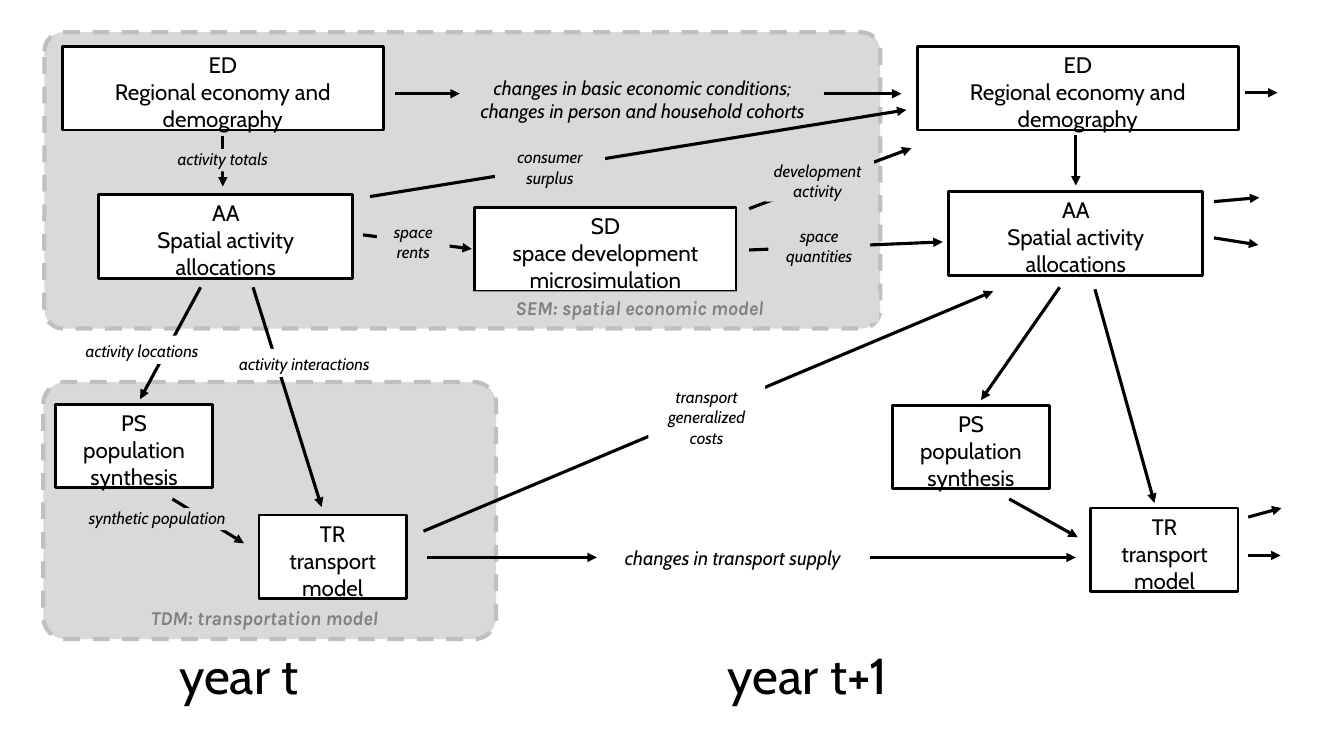
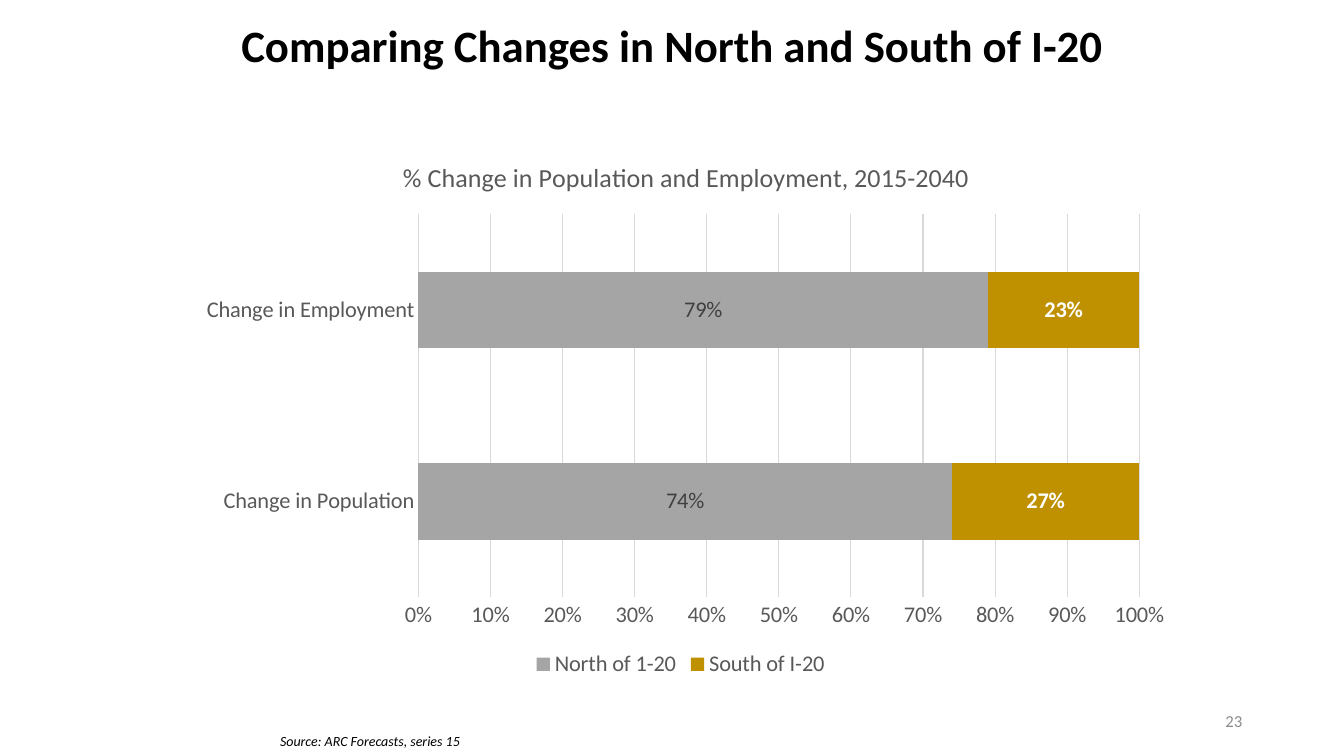
from lxml import etree
from pptx import Presentation
from pptx.chart.data import CategoryChartData
from pptx.dml.color import RGBColor
from pptx.enum.chart import XL_CHART_TYPE, XL_LEGEND_POSITION, XL_TICK_MARK
from pptx.enum.dml import MSO_LINE
from pptx.enum.shapes import MSO_CONNECTOR, MSO_SHAPE
from pptx.enum.text import MSO_ANCHOR, PP_ALIGN
from pptx.oxml.ns import qn
from pptx.util import Pt

LEFT, CENTER, RIGHT = PP_ALIGN.LEFT, PP_ALIGN.CENTER, PP_ALIGN.RIGHT
TOP, MIDDLE = MSO_ANCHOR.TOP, MSO_ANCHOR.MIDDLE
NO_TICK = XL_TICK_MARK.NONE

# Shared look: 100 px to the inch
PX = 9144
BLACK, WHITE, BAND, BAND_EDGE = "000000", "FFFFFF", "D9D9D9", "BFBFBF"
GRAY, AXIS_TEXT, PAGE_NUMBER = "808080", "595959", "8C8C8C"
DIAGRAM_FONT, BAND_FONT, REPORT_FONT = "Cabin", "Karla", "Calibri"
DEFAULT_INSETS = (10, 5, 10, 5)
TIGHT = (0, 0, 0, 4)

# Diagram content: left, top, width, height
BANDS = [
    ((43, 379, 449, 255), 0.085),
    ((44, 32, 829, 294), 0.064),
]
MODELS = {
    "ED": "ED\nRegional economy and demography",
    "AA": "AA\nSpatial activity allocations",
    "SD": "SD\nspace development microsimulation",
    "PS": "PS\npopulation\nsynthesis",
    "TR": "TR\ntransport\nmodel",
}
MODEL_WIDTHS = {"ED": 318, "AA": 252, "SD": 259, "PS": 156, "TR": 146}
MODEL_HEIGHT = 83
MODEL_PLACES = [
    # year t
    ("ED", 62, 46), ("AA", 98, 193), ("SD", 471, 206),
    ("PS", 55, 401), ("TR", 257, 511),
    # year t+1
    ("ED", 910, 46), ("AA", 941, 190), ("PS", 885, 402), ("TR", 1082, 504),
]
ARROWS = [
    # within year t
    (221, 135, 221, 185), (360, 233, 468, 247), (199, 285, 139, 396),
    (251, 285, 319, 503), (171, 495, 242, 539),
    # from year t to year t+1
    (392, 93, 456, 93), (817, 93, 894, 93), (367, 195, 899, 109),
    (743, 207, 904, 147), (743, 248, 935, 240), (420, 527, 985, 289),
    (424, 553, 592, 553), (863, 553, 1067, 553),
    # within year t+1
    (1067, 134, 1067, 184), (1051, 285, 973, 397), (1086, 287, 1145, 499),
    (1001, 495, 1069, 533),
    # onwards
    (1235, 92, 1267, 92), (1204, 200, 1249, 196), (1204, 236, 1248, 243),
    (1238, 513, 1271, 504), (1238, 551, 1270, 551),
]
FLOW_LABELS = [
    ("activity totals", (169, 148, 104, 22), BAND, TIGHT),
    ("activity locations", (63, 333, 156, 28), WHITE, DEFAULT_INSETS),
    ("activity interactions", (215, 346, 174, 28), WHITE, DEFAULT_INSETS),
    ("space\nquantities", (762, 224, 101, 41), BAND, TIGHT),
    ("development activity", (759, 159, 108, 41), BAND, (0, 0, 4, 4)),
    ("consumer\nsurplus", (491, 146, 109, 41), BAND, TIGHT),
    ("space\nrents", (374, 220, 72, 41), BAND, TIGHT),
    ("transport\ngeneralized\ncosts", (643, 379, 116, 65), WHITE, DEFAULT_INSETS),
    ("synthetic population", (65, 504, 182, 22), BAND, TIGHT),
]
CHANGE_LABELS = [
    ("changes in basic economic conditions;\n"
     "changes in person and household cohorts", (432, 70, 411, 52)),
    ("changes in transport supply", (586, 537, 282, 31)),
]
BAND_LABELS = [
    ("TDM: transportation model", (69, 596, 387, 31)),
    ("SEM: spatial economic model", (397, 289, 475, 31)),
]
YEARS = [("year t", (168, 634, 300, 65)), ("year t+1", (712, 634, 300, 65))]

# Chart content
CHART_TITLE = "% Change in Population and Employment, 2015-2040"
CATEGORIES = ["Change in Population", "Change in Employment"]
# name, values, fill, label colour, bold label
SERIES = [
    ("North of 1-20", (0.74, 0.79), "A5A5A5", "404040", False),
    ("South of I-20", (0.27, 0.23), "BF9000", WHITE, True),
]


def rgb(value):
    return RGBColor.from_string(value)


def emu(values):
    return [value * PX for value in values]


def set_font(font, name, size, color=BLACK, bold=False, italic=False):
    font.name, font.size = name, Pt(size)
    font.bold, font.italic = bold, italic
    font.color.rgb = rgb(color)


def write(shape, text, font=DIAGRAM_FONT, size=16, color=BLACK, bold=False,
          italic=False, align=CENTER, anchor=TOP, insets=DEFAULT_INSETS):
    frame = shape.text_frame
    frame.word_wrap = True
    frame.vertical_anchor = anchor
    (frame.margin_left, frame.margin_top,
     frame.margin_right, frame.margin_bottom) = emu(insets)
    for index, line in enumerate(text.split("\n")):
        paragraph = frame.paragraphs[0] if index == 0 else frame.add_paragraph()
        paragraph.alignment = align
        run = paragraph.add_run()
        run.text = line
        set_font(run.font, font, size, color, bold, italic)


def add_text(slide, text, place, fill=None, **style):
    shape = slide.shapes.add_textbox(*emu(place))
    if fill:
        shape.fill.solid()
        shape.fill.fore_color.rgb = rgb(fill)
    write(shape, text, **style)


def add_box(slide, kind, place, fill, edge, width):
    shape = slide.shapes.add_shape(kind, *emu(place))
    shape.shadow.inherit = False
    shape.fill.solid()
    shape.fill.fore_color.rgb = rgb(fill)
    shape.line.color.rgb = rgb(edge)
    shape.line.width = Pt(width)
    return shape


def add_arrow(slide, ends):
    arrow = slide.shapes.add_connector(MSO_CONNECTOR.STRAIGHT, *emu(ends))
    arrow.line.color.rgb = rgb(BLACK)
    arrow.line.width = Pt(2.25)
    line = arrow.line._get_or_add_ln()
    etree.SubElement(line, qn("a:tailEnd"), type="triangle")
    etree.SubElement(arrow._element.spPr, qn("a:effectLst"))


def set_layout(element, index, inner=False, **fractions):
    """Place a chart part by fractions of the chart area."""
    for old in element.findall(qn("c:layout")):
        element.remove(old)
    layout = etree.Element(qn("c:layout"))
    element.insert(index, layout)
    manual = etree.SubElement(layout, qn("c:manualLayout"))
    settings = {"layoutTarget": "inner"} if inner else {}
    settings.update(xMode="edge", yMode="edge", **fractions)
    for tag, value in settings.items():
        etree.SubElement(manual, qn("c:" + tag), val=str(value))


def build_diagram(slide):
    for place, rounding in BANDS:
        band = add_box(slide, MSO_SHAPE.ROUNDED_RECTANGLE, place, BAND, BAND_EDGE, 3)
        band.adjustments[0] = rounding
        band.line.dash_style = MSO_LINE.DASH
    for model, left, top in MODEL_PLACES:
        place = (left, top, MODEL_WIDTHS[model], MODEL_HEIGHT)
        box = add_box(slide, MSO_SHAPE.RECTANGLE, place, WHITE, BLACK, 2)
        write(box, MODELS[model])
    for ends in ARROWS:
        add_arrow(slide, ends)
    for text, place, fill, insets in FLOW_LABELS:
        add_text(slide, text, place, fill, size=12, italic=True, insets=insets)
    for text, place in CHANGE_LABELS:
        add_text(slide, text, place, size=14, italic=True)
    for text, place in BAND_LABELS:
        add_text(slide, text, place, BAND, font=BAND_FONT, size=14, color=GRAY,
                 bold=True, italic=True)
    for text, place in YEARS:
        add_text(slide, text, place, size=36, align=LEFT)


def add_change_chart(slide, place):
    data = CategoryChartData(number_format="0%")
    data.categories = CATEGORIES
    for name, values, *_ in SERIES:
        data.add_series(name, values)
    chart = slide.shapes.add_chart(XL_CHART_TYPE.BAR_STACKED, *emu(place), data).chart
    set_font(chart.font, REPORT_FONT, 16)

    # Title and plot area
    chart.has_title = True
    frame = chart.chart_title.text_frame
    frame.text = CHART_TITLE
    set_font(frame.paragraphs[0].runs[0].font, REPORT_FONT, 18.6, AXIS_TEXT)
    set_layout(chart.chart_title._element, 1, x=0.22, y=0.03)
    plot_area = chart._chartSpace.chart.plotArea
    set_layout(plot_area, 0, inner=True, x=0.24, y=0.14, w=0.715, h=0.704)

    # Axes
    category_axis, value_axis = chart.category_axis, chart.value_axis
    for axis in (category_axis, value_axis):
        axis.major_tick_mark = axis.minor_tick_mark = NO_TICK
        set_font(axis.tick_labels.font, REPORT_FONT, 16, AXIS_TEXT)
    value_axis.minimum_scale, value_axis.maximum_scale = 0, 1
    value_axis.major_unit = 0.1
    value_axis.tick_labels.number_format = "0%"
    value_axis.tick_labels.number_format_is_linked = False
    value_axis.format.line.fill.background()
    for line in (category_axis.format.line, value_axis.major_gridlines.format.line):
        line.color.rgb = rgb(BAND)
        line.width = Pt(0.75)

    # Bars
    plot = chart.plots[0]
    plot.gap_width, plot.overlap = 150, 100
    plot.vary_by_categories = False
    for series, (_, _, fill, label_color, bold) in zip(plot.series, SERIES):
        series.format.fill.solid()
        series.format.fill.fore_color.rgb = rgb(fill)
        labels = series.data_labels
        labels.show_value = True
        labels.number_format = "0%"
        labels.number_format_is_linked = False
        set_font(labels.font, REPORT_FONT, 16, label_color, bold)

    # Legend
    chart.has_legend = True
    chart.legend.position = XL_LEGEND_POSITION.BOTTOM
    chart.legend.include_in_layout = False
    set_font(chart.legend.font, REPORT_FONT, 16, AXIS_TEXT)


def build_comparison(slide):
    add_change_chart(slide, (175, 137, 1000, 540))
    add_text(slide, "Comparing Changes in North and South of I-20", (167, 13, 1000, 86),
             font=REPORT_FONT, size=32, bold=True)
    add_text(slide, "Source: ARC Forecasts, series 15", (268, 722, 314, 27),
             font=REPORT_FONT, size=10, italic=True, align=LEFT)
    add_text(slide, "23", (942, 695, 300, 40), font=REPORT_FONT, size=12,
             color=PAGE_NUMBER, align=RIGHT, anchor=MIDDLE)


def main():
    presentation = Presentation()
    presentation.slide_width, presentation.slide_height = emu((1333, 750))
    blank = presentation.slide_layouts[6]
    for build in (build_diagram, build_comparison):
        build(presentation.slides.add_slide(blank))
    presentation.save("out.pptx")


if __name__ == "__main__":
    main()
